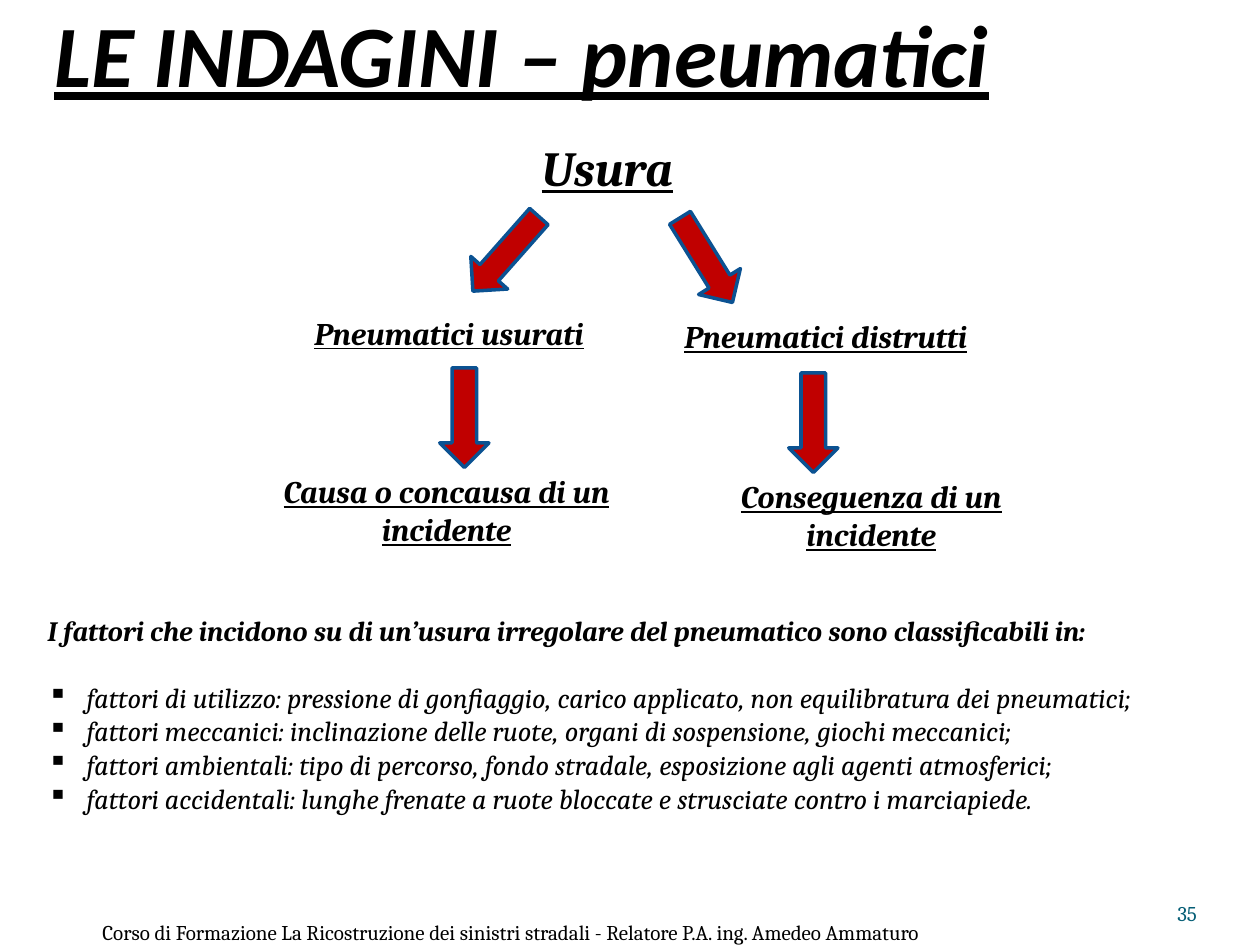
import pptx
import pptx.util
import pptx.dml.color
import pptx.enum.shapes
import pptx.enum.text
from lxml import etree

COLORS = {"text": "000000", "arrow": "C00000", "outline": "0B5292", "number": "045D75"}
COLS, ROWS = 100, 75
A = "{http://schemas.openxmlformats.org/drawingml/2006/main}"
ALIGN = pptx.enum.text.PP_ALIGN
ANCHOR = pptx.enum.text.MSO_ANCHOR


def rgb(name):
    return pptx.dml.color.RGBColor.from_string(COLORS[name])


class Deck:
    """Holds the style and the current slide; lengths are grid columns and rows."""

    def __init__(self, font="Cambria"):
        self.prs = pptx.Presentation()
        self.prs.slide_width = pptx.util.Inches(10)
        self.prs.slide_height = pptx.util.Inches(7.5)
        self.font = font
        self.s = self.prs.slides.add_slide(self.prs.slide_layouts[5])

    def place(self, col, row, cols, rows):
        dx, dy = self.prs.slide_width / COLS, self.prs.slide_height / ROWS
        return [round(v) for v in (col * dx, row * dy, cols * dx, rows * dy)]

    def frame(self, sp, anchor=ANCHOR.TOP, margins=(0.1, 0.05, 0.1, 0.05)):
        tf = sp.text_frame
        tf.word_wrap = True
        tf.auto_size = pptx.enum.text.MSO_AUTO_SIZE.NONE
        tf.vertical_anchor = anchor
        (tf.margin_left, tf.margin_top,
         tf.margin_right, tf.margin_bottom) = map(pptx.util.Inches, margins)
        return tf

    def run(self, p, text, size, align, color="text", font=None,
            bold=False, italic=False, underline=False):
        p.alignment = align
        r = p.add_run()
        r.text = text
        f = r.font
        f.name, f.size = font or self.font, pptx.util.Pt(size)
        f.bold, f.italic, f.underline = bold, italic, underline
        f.color.rgb = rgb(color)

    def title(self, at, text):
        sp = self.s.shapes.title
        sp.left, sp.top, sp.width, sp.height = self.place(*at)
        tf = self.frame(sp, ANCHOR.BOTTOM, (0, 0.05, 0, 0))
        self.run(tf.paragraphs[0], text, 50, ALIGN.LEFT, font="Calibri",
                 bold=True, italic=True, underline=True)

    def box(self, at, **frame):
        return self.frame(self.s.shapes.add_textbox(*self.place(*at)), **frame)

    def footer(self, at, text, align, color="text"):
        tf = self.box(at, anchor=ANCHOR.BOTTOM, margins=(0, 0, 0, 0))
        self.run(tf.paragraphs[0], text, 12, align, color)

    def label(self, at, text, size=18):
        self.run(self.box(at).paragraphs[0], text, size, ALIGN.CENTER,
                 bold=True, italic=True, underline=True)

    def arrow(self, col, row, rotation=0):
        sp = self.s.shapes.add_shape(pptx.enum.shapes.MSO_SHAPE.DOWN_ARROW,
                                     *self.place(col, row, 3.9, 7.9))
        sp.rotation = rotation
        sp.shadow.inherit = False
        sp.fill.solid()
        sp.fill.fore_color.rgb = rgb("arrow")
        sp.line.color.rgb = rgb("outline")
        sp.line.width = pptx.util.Pt(2)

    def bullets(self, at, heading, items, size=16):
        tf = self.box(at)
        self.run(tf.paragraphs[0], heading, size, ALIGN.JUSTIFY, bold=True, italic=True)
        indent = pptx.util.Inches(0.31)
        for i, item in enumerate(items):
            p = tf.add_paragraph()
            pPr = p._p.get_or_add_pPr()
            pPr.set("marL", str(indent))
            pPr.set("indent", str(-indent))
            etree.SubElement(pPr, A + "buChar", char="▪")
            if i == 0:
                p.space_before = pptx.util.Pt(19)
            self.run(p, item, size, ALIGN.JUSTIFY, italic=True)


def main():
    d = Deck()

    # Title and footer
    d.title((4.3, -1.1, 90, 9.4), "LE INDAGINI – pneumatici")
    d.footer((86.7, 69.5, 8.3, 4), "35", ALIGN.RIGHT, "number")
    d.footer((0.2, 71, 80.7, 4),
             "Corso di Formazione La Ricostruzione dei sinistri stradali"
             " - Relatore P.A. ing. Amedeo Ammaturo", ALIGN.CENTER)

    # Wear diagram: root, then two branches
    d.label((23.2, 10.4, 50, 9.8), "Usura", 28)
    branches = [
        ((38.2, 16.2, 41.5), (19.3, 24.4), "Pneumatici usurati",
         (34.9, 29.2), (19.1, 37), "Causa o concausa di un incidente"),
        ((54.1, 16.7, 328.2), (49.2, 24.7), "Pneumatici distrutti",
         (62.6, 29.6), (52.8, 37.4), "Conseguenza di un incidente"),
    ]
    for slanted, state_at, state, down, outcome_at, outcome in branches:
        d.arrow(*slanted)
        d.label((*state_at, 32.7, 8.1), state)
        d.arrow(*down)
        d.label((*outcome_at, 32.7, 11.1), outcome)

    # Factors
    d.bullets((2.8, 48.2, 93.7, 17.2),
              "I fattori che incidono su di un’usura irregolare del pneumatico"
              " sono classificabili in:",
              ["fattori di utilizzo: pressione di gonfiaggio, carico applicato,"
               " non equilibratura dei pneumatici;",
               "fattori meccanici: inclinazione delle ruote, organi di sospensione,"
               " giochi meccanici;",
               "fattori ambientali: tipo di percorso, fondo stradale,"
               " esposizione agli agenti atmosferici;",
               "fattori accidentali: lunghe frenate a ruote bloccate e strusciate"
               " contro i marciapiede."])

    d.prs.save("out.pptx")


if __name__ == "__main__":
    main()
